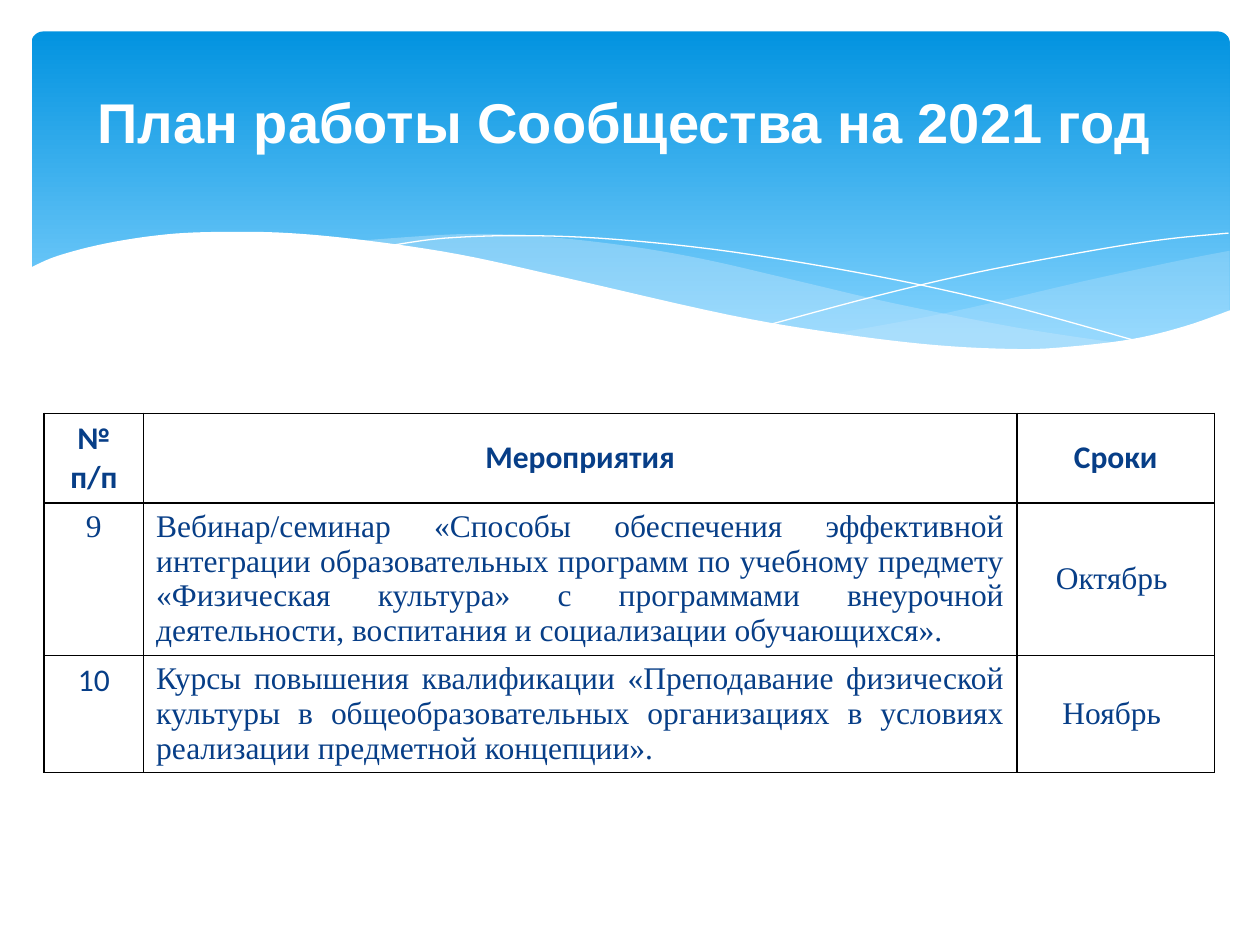
from lxml import etree
from pptx import Presentation
from pptx.dml.color import RGBColor as Rgb
from pptx.enum.shapes import MSO_SHAPE as Shape
from pptx.enum.text import MSO_ANCHOR as Anchor, PP_ALIGN as Align
from pptx.oxml import parse_xml
from pptx.oxml.ns import nsdecls, qn
from pptx.util import Inches, Pt

WHITE = Rgb(0xFF, 0xFF, 0xFF)
BLACK = Rgb(0, 0, 0)
NAVY = Rgb(0x07, 0x3E, 0x87)
BLUE = Rgb(0x02, 0x93, 0xE0)
SKY = Rgb(0x83, 0xD3, 0xFE)
PALE = Rgb(0xC6, 0xE7, 0xFC)
SERIF, SANS = "Times New Roman", "Calibri"

# Key points of the wave edges, in inches
RIGHT_TOP = [(9.76, 1.99), (9.35, 2.07), (8.61, 2.23), (7.53, 2.48), (6.61, 2.65)]
RIGHT_LOW = [(6.61, 2.65), (7.18, 2.72), (7.69, 2.77), (8.24, 2.77), (8.72, 2.74),
             (9.21, 2.65), (9.49, 2.57), (9.76, 2.47)]
MID_TOP = [(8.93, 2.73), (8.07, 2.6), (7.06, 2.4), (6.29, 2.22), (5.55, 2.05),
           (4.89, 1.94), (4.2, 1.87), (3.61, 1.86), (2.86, 1.91)]
MID_LOW = [(2.86, 1.91), (3.62, 2.03), (4.49, 2.22), (5.66, 2.48), (6.5, 2.64),
           (7.22, 2.74), (7.85, 2.78), (8.38, 2.78), (8.93, 2.73)]
FALL = [(3.09, 1.95), (3.53, 1.89), (4.16, 1.87), (4.89, 1.9), (5.82, 2),
        (6.95, 2.19), (7.95, 2.41), (9.07, 2.72)]
RISE = [(6.13, 2.57), (6.95, 2.35), (7.76, 2.16), (8.66, 1.99), (9.24, 1.9),
        (9.75, 1.85)]
FRONT = [(9.77, 2.46), (9.4, 2.59), (8.99, 2.69), (8.5, 2.75), (8.09, 2.77),
         (7.44, 2.74), (6.68, 2.65), (5.79, 2.5), (4.47, 2.2), (3.65, 2.02),
         (2.92, 1.91), (2.3, 1.85), (1.77, 1.84), (1.32, 1.86), (0.85, 1.93),
         (0.46, 2.03), (0.23, 2.13)]
BASE = [(0.23, 3.29), (9.77, 3.29)]

COLS = [0.79, 6.93, 1.57]
ROWS = [0.71, 1.21, 0.93]
HEAD = ["№ п/п", "Мероприятия", "Сроки"]
PLAN = [
    ["9", "Вебинар/семинар «Способы обеспечения эффективной интеграции "
     "образовательных программ по учебному предмету «Физическая культура» "
     "с программами внеурочной деятельности, воспитания и социализации "
     "обучающихся». ", "Октябрь "],
    ["10", "Курсы повышения квалификации «Преподавание физической культуры "
     "в общеобразовательных организациях в условиях реализации предметной "
     "концепции». ", "Ноябрь "],
]


def smooth(keys, steps=6):
    """Return points of a Catmull-Rom curve through the keys."""
    ends = [keys[0], *keys, keys[-1]]
    curve = [keys[0]]
    for a, b, c, d in zip(ends, ends[1:], ends[2:], ends[3:]):
        for i in range(1, steps + 1):
            t = i / steps
            curve.append(tuple(
                (2 * q + (r - p) * t + (2 * p - 5 * q + 4 * r - s) * t ** 2
                 + (3 * q - p - 3 * r + s) * t ** 3) / 2
                for p, q, r, s in zip(a, b, c, d)))
    return curve


class Deck:
    def __init__(self):
        self.prs = Presentation()
        self.prs.slide_width, self.prs.slide_height = Inches(10), Inches(7.5)
        self.slide = self.prs.slides.add_slide(self.prs.slide_layouts[5])
        self.shapes = self.slide.shapes

    def text(self, frame, words, align, color, **style):
        para = frame.paragraphs[0]
        para.alignment = align
        run = para.add_run()
        run.text = words
        for name, value in style.items():
            setattr(run.font, name, value)
        run.font.color.rgb = color

    def banner(self, box):
        shape = self.shapes.add_shape(Shape.ROUNDED_RECTANGLE, *map(Inches, box))
        shape.adjustments[0] = 0.034
        shape.shadow.inherit = False
        shape.line.fill.background()
        shape.fill.gradient()
        shape.fill.gradient_angle = 270
        stops = zip(shape.fill.gradient_stops, [BLUE, SKY], [0, 0.9])
        for stop, color, place in stops:
            stop.color.rgb, stop.position = color, place

    def trace(self, points, close):
        (x, y), *rest = points
        pen = self.shapes.build_freeform(Inches(x), Inches(y))
        pen.add_line_segments([(Inches(x), Inches(y)) for x, y in rest], close)
        shape = pen.convert_to_shape()
        shape.shadow.inherit = False
        return shape

    def wave(self, points, color, alpha=100):
        shape = self.trace(points, True)
        shape.line.fill.background()
        shape.fill.solid()
        shape.fill.fore_color.rgb = color
        if alpha < 100:
            tint = shape.element.spPr.find(qn("a:solidFill"))[0]
            etree.SubElement(tint, qn("a:alpha")).set("val", str(alpha * 1000))

    def thread(self, points):
        shape = self.trace(points, False)
        shape.fill.background()
        shape.line.color.rgb = WHITE
        shape.line.width = Pt(0)

    def title(self, words, box):
        title = self.shapes.title
        self.shapes.element.append(title.element)  # bring to front
        title.left, title.top, title.width, title.height = map(Inches, box)
        title.text_frame.vertical_anchor = Anchor.MIDDLE
        self.text(title.text_frame, words, Align.CENTER, WHITE, name="Arial",
                  size=Pt(32), bold=True)

    def border(self, cell):
        props = cell._tc.get_or_add_tcPr()
        for i, side in enumerate("LRTB"):
            props.insert(i, parse_xml(
                f'<a:ln{side} {nsdecls("a")} w="12700"><a:solidFill>'
                f'<a:srgbClr val="{BLACK}"/></a:solidFill></a:ln{side}>'))

    def table(self, rows, left, top):
        table = self.shapes.add_table(
            len(ROWS), len(COLS), Inches(left), Inches(top),
            Inches(sum(COLS)), Inches(sum(ROWS))).table
        table.first_row = table.horz_banding = False
        for col, width in zip(table.columns, COLS):
            col.width = Inches(width)
        for row, height in zip(table.rows, ROWS):
            row.height = Inches(height)
        for r, row in enumerate(rows):
            for c, words in enumerate(row):
                cell, head = table.cell(r, c), r == 0
                cell.fill.background()
                self.border(cell)
                middle = head or c == 2
                cell.vertical_anchor = Anchor.MIDDLE if middle else Anchor.TOP
                align = Align.JUSTIFY if c == 1 and not head else Align.CENTER
                font = SANS if head or words == "10" else SERIF
                self.text(cell.text_frame, words, align, NAVY, name=font,
                          size=Pt(18), bold=head)


def main():
    deck = Deck()
    deck.banner((0.25, 0.25, 9.51, 2.7))
    deck.wave(smooth(RIGHT_TOP) + smooth(RIGHT_LOW), PALE, 29)
    deck.wave(smooth(MID_TOP) + smooth(MID_LOW), PALE, 40)
    for line in (FALL, RISE):
        deck.thread(smooth(line))
    deck.wave(smooth(FRONT) + BASE, WHITE)
    deck.title("План работы Сообщества на 2021 год", (0.27, 0.28, 9.37, 1.37))
    deck.table([HEAD, *PLAN], 0.35, 3.28)
    deck.prs.save("out.pptx")


if __name__ == "__main__":
    main()
